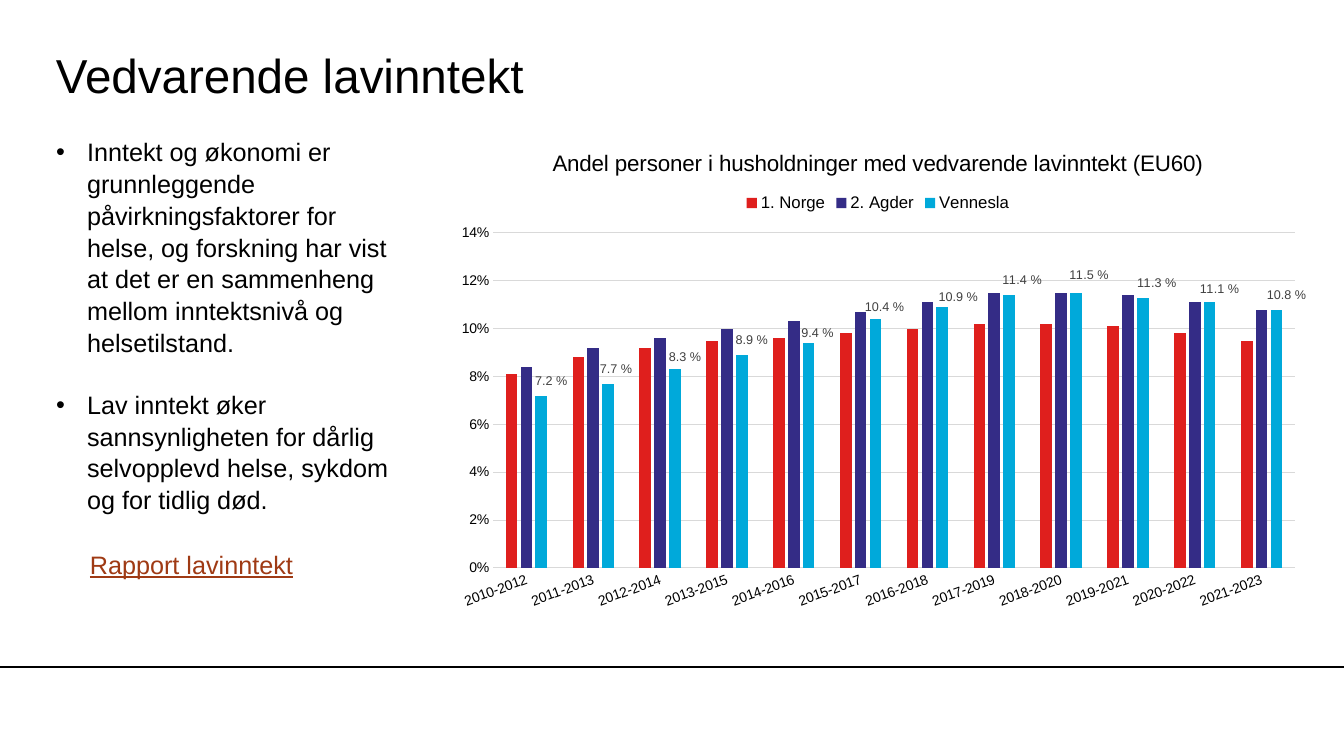
from dataclasses import dataclass

from lxml.etree import SubElement
from pptx import Presentation
from pptx.chart.data import CategoryChartData
from pptx.dml.color import RGBColor
from pptx.enum.chart import XL_CHART_TYPE, XL_LABEL_POSITION, XL_LEGEND_POSITION, XL_TICK_MARK
from pptx.enum.shapes import MSO_CONNECTOR
from pptx.enum.text import MSO_ANCHOR, MSO_AUTO_SIZE, PP_ALIGN
from pptx.oxml import parse_xml
from pptx.oxml.ns import nsdecls, qn
from pptx.util import Pt

HEADING = "Vedvarende lavinntekt"
POINTS = [
    "Inntekt og økonomi er grunnleggende påvirkningsfaktorer for helse, og forskning har vist "
    "at det er en sammenheng mellom inntektsnivå og helsetilstand.",
    "Lav inntekt øker sannsynligheten for dårlig selvopplevd helse, sykdom og for tidlig død.",
]
REPORT = "Rapport lavinntekt"
CHART_HEADING = "Andel personer i husholdninger med vedvarende lavinntekt (EU60)"
PERIODS = [f"{year}-{year + 2}" for year in range(2010, 2022)]
REGIONS = {
    "1. Norge": (0.081, 0.088, 0.092, 0.095, 0.096, 0.098, 0.1, 0.102, 0.102, 0.101, 0.098, 0.095),
    "2. Agder": (0.084, 0.092, 0.096, 0.1, 0.103, 0.107, 0.111, 0.115, 0.115, 0.114, 0.111, 0.108),
    "Vennesla": (0.072, 0.077, 0.083, 0.089, 0.094, 0.104, 0.109, 0.114, 0.115, 0.113, 0.111, 0.108),
}
LABEL_SHIFTS = [(10, -3), (8, -3), (10, -1), (10, -3), (9, 2), (9, -1),
                (16, 1), (13, -4), (13, -6), (14, -3), (10, -2), (10, -3)]

SLIDE = (1344, 756)
HEADING_BOX = (56, 36, 1119, 76)
POINTS_BOX = (46, 130, 353, 377)
REPORT_BOX = (80, 544, 267, 40)
CHART_BOX = (444, 130, 868, 489)
PLOT_BOX = (493, 233, 802, 335)
RULE_TOP = 667
INDENT = 31


@dataclass(frozen=True)
class Theme:
    font: str = "Arial"
    ink: str = "000000"
    link: str = "9F3A14"
    grid: str = "D9D9D9"
    value: str = "404040"
    regions: tuple = ("DF1F1D", "342C86", "00A9DA")
    heading: int = 34
    body: int = 18
    chart_heading: int = 16
    legend: int = 12
    axis: int = 10
    label: int = 9


THEME = Theme()


def px(length):
    return round(length * 914400 / 100.8)


def place(box):
    return [px(length) for length in box]


def style(font, size, color=THEME.ink):
    font.name = THEME.font
    font.size = Pt(size)
    font.bold = False
    font.color.rgb = RGBColor.from_string(color)


def rule(line, color):
    line.color.rgb = RGBColor.from_string(color)
    line.width = Pt(0.75)


def move(placeholder, box):
    placeholder.left, placeholder.top, placeholder.width, placeholder.height = place(box)
    placeholder.text_frame.auto_size = MSO_AUTO_SIZE.NONE
    placeholder.text_frame.word_wrap = True


def manual_layout(**settings):
    layout = parse_xml(f"<c:layout {nsdecls('c')}><c:manualLayout/></c:layout>")
    for tag, value in settings.items():
        SubElement(layout[0], qn(f"c:{tag}")).set("val", str(value))
    return layout


def add_heading(slide):
    heading = slide.shapes.title
    move(heading, HEADING_BOX)
    frame = heading.text_frame
    frame.text = HEADING
    frame.margin_left = frame.margin_right = frame.margin_top = frame.margin_bottom = 0
    frame.vertical_anchor = MSO_ANCHOR.MIDDLE
    frame.paragraphs[0].alignment = PP_ALIGN.LEFT
    style(frame.paragraphs[0].runs[0].font, THEME.heading)


def add_points(slide):
    points = slide.placeholders[1]
    move(points, POINTS_BOX)
    frame = points.text_frame
    frame.vertical_anchor = MSO_ANCHOR.TOP
    frame.text = "\n".join(POINTS)
    for index, point in enumerate(frame.paragraphs):
        properties = point._p.get_or_add_pPr()
        properties.set("marL", str(px(INDENT)))
        properties.set("indent", str(-px(INDENT)))
        SubElement(properties, qn("a:buFont")).set("typeface", THEME.font)
        SubElement(properties, qn("a:buChar")).set("char", "•")
        point.line_spacing = 1.05
        point.space_before = Pt(21.7 if index else 0)
        style(point.runs[0].font, THEME.body)


def add_report(slide):
    frame = slide.shapes.add_textbox(*place(REPORT_BOX)).text_frame
    frame.word_wrap = True
    frame.text = REPORT
    font = frame.paragraphs[0].runs[0].font
    style(font, THEME.body, THEME.link)
    font.underline = True


def add_footer_rule(slide):
    footer = slide.shapes.add_connector(
        MSO_CONNECTOR.STRAIGHT, 0, px(RULE_TOP), px(SLIDE[0]), px(RULE_TOP))
    rule(footer.line, THEME.ink)
    SubElement(footer._element.spPr, qn("a:effectLst"))


def format_axes(chart):
    for axis in (chart.category_axis, chart.value_axis):
        axis.major_tick_mark = axis.minor_tick_mark = XL_TICK_MARK.NONE
        style(axis.tick_labels.font, THEME.axis)
    periods, shares = chart.category_axis, chart.value_axis
    rule(periods.format.line, THEME.grid)
    periods._element.find(qn("c:txPr")).find(qn("a:bodyPr")).set("rot", str(-20 * 60000))
    shares.minimum_scale, shares.maximum_scale, shares.major_unit = 0, 0.14, 0.02
    shares.tick_labels.number_format = "0%"
    shares.tick_labels.number_format_is_linked = False
    shares.format.line.fill.background()
    rule(shares.major_gridlines.format.line, THEME.grid)


def label_series(series):
    labels = series.data_labels
    labels.show_value = True
    labels.number_format = "0.0\\ %"
    labels.number_format_is_linked = False
    labels.position = XL_LABEL_POSITION.OUTSIDE_END
    style(labels.font, THEME.label, THEME.value)
    for index, (right, down) in enumerate(LABEL_SHIFTS):
        label = series.points[index].data_label
        style(label.font, THEME.label, THEME.value)
        label.position = XL_LABEL_POSITION.OUTSIDE_END
        element = labels._element.findall(qn("c:dLbl"))[index]
        element.insert(1, manual_layout(
            x=round(right / CHART_BOX[2], 4), y=round(down / CHART_BOX[3], 4)))
        element.insert(2, parse_xml(
            f'<c:numFmt {nsdecls("c")} formatCode="0.0\\ %" sourceLinked="0"/>'))


def add_income_chart(slide):
    income = CategoryChartData(number_format="0.0%")
    income.categories = PERIODS
    for region, shares in REGIONS.items():
        income.add_series(region, shares)
    chart = slide.shapes.add_chart(
        XL_CHART_TYPE.COLUMN_CLUSTERED, *place(CHART_BOX), income).chart
    style(chart.font, THEME.axis)
    chart.has_title = True
    chart.chart_title.include_in_layout = False
    chart.chart_title.text_frame.text = CHART_HEADING
    style(chart.chart_title.text_frame.paragraphs[0].runs[0].font, THEME.chart_heading)
    chart.has_legend = True
    chart.legend.position = XL_LEGEND_POSITION.TOP
    chart.legend.include_in_layout = False
    style(chart.legend.font, THEME.legend)
    format_axes(chart)

    plot = chart.plots[0]
    plot.gap_width, plot.overlap, plot.vary_by_categories = 219, -27, False
    for series, color in zip(plot.series, THEME.regions):
        series.format.fill.solid()
        series.format.fill.fore_color.rgb = RGBColor.from_string(color)
        series.invert_if_negative = False
    label_series(plot.series[2])

    left, top, width, height = CHART_BOX
    plot_left, plot_top, plot_width, plot_height = PLOT_BOX
    area = chart._chartSpace.chart.plotArea
    for old in area.findall(qn("c:layout")):
        area.remove(old)
    area.insert(0, manual_layout(
        layoutTarget="inner", xMode="edge", yMode="edge",
        x=round((plot_left - left) / width, 4), y=round((plot_top - top) / height, 4),
        w=round(plot_width / width, 4), h=round(plot_height / height, 4)))


def main():
    deck = Presentation()
    deck.slide_width, deck.slide_height = place(SLIDE)
    slide = deck.slides.add_slide(deck.slide_layouts[1])
    for add_part in (add_footer_rule, add_heading, add_points, add_report, add_income_chart):
        add_part(slide)
    deck.save("out.pptx")


if __name__ == "__main__":
    main()
